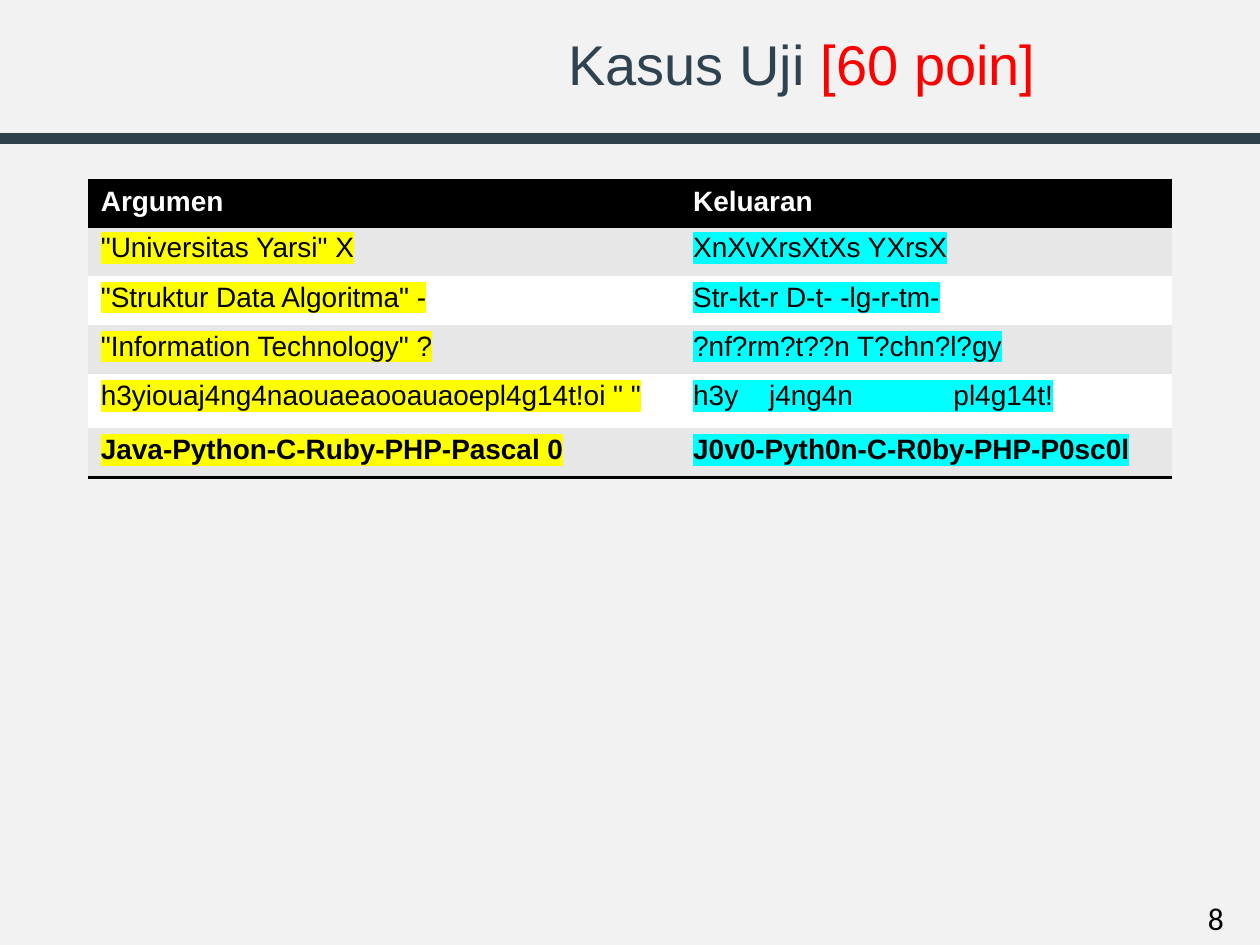
from lxml import etree
from pptx import Presentation
from pptx import util as u
from pptx.dml.color import RGBColor
from pptx.enum import shapes, text
from pptx.oxml import ns

COLORS = {
    "page": "F2F2F2", "rule": "2F424C", "title": "2F424F", "red": "FF0000",
    "black": "000000", "white": "FFFFFF", "band": "E7E7E7",
    "argument": "FFFF00", "output": "00FFFF",
}

CASES = [
    ("Argumen", "Keluaran"),
    ('"Universitas Yarsi" X', "XnXvXrsXtXs YXrsX"),
    ('"Struktur Data Algoritma" -', "Str-kt-r D-t- -lg-r-tm-"),
    ('"Information Technology" ?', "?nf?rm?t??n T?chn?l?gy"),
    ('h3yiouaj4ng4naouaeaooauaoepl4g14t!oi " "', "h3y    j4ng4n             pl4g14t!"),
    ("Java-Python-C-Ruby-PHP-Pascal 0", "J0v0-Pyth0n-C-R0by-PHP-P0sc0l"),
]
COLUMN_WIDTHS = (11.94, 9.9)
ROW_HEIGHTS = (0.92, 1, 0.99, 0.99, 1.09, 1)


def rgb(name):
    return RGBColor.from_string(COLORS[name])


def add_color(parent, tag, color):
    element = etree.SubElement(parent, ns.qn(tag))
    etree.SubElement(element, ns.qn("a:srgbClr"), val=COLORS[color])
    return element


def add_span(para, wording, color, highlight=None, **formats):
    span = para.add_run()
    span.text = wording
    for key, value in formats.items():
        setattr(span.font, key, value)
    span.font.color.rgb = rgb(color)
    if highlight:
        properties = span.font._element
        mark = add_color(properties, "a:highlight", highlight)
        properties.find(ns.qn("a:solidFill")).addnext(mark)


def add_text_box(page, left, top, width, height,
                 align=text.PP_ALIGN.LEFT, anchor=text.MSO_ANCHOR.TOP):
    box = page.shapes.add_textbox(u.Cm(left), u.Cm(top), u.Cm(width), u.Cm(height))
    frame = box.text_frame
    frame.word_wrap = True
    frame.vertical_anchor = anchor
    para = frame.paragraphs[0]
    para.alignment = align
    return para


def add_header(page, left, top, width, height):
    # Rule along the lower edge
    bottom = u.Cm(top + height)
    rule = page.shapes.add_connector(shapes.MSO_CONNECTOR.STRAIGHT,
                                     u.Cm(left), bottom, u.Cm(left + width), bottom)
    rule.line.color.rgb = rgb("rule")
    rule.line.width = u.Pt(6)
    etree.SubElement(rule._element.spPr, ns.qn("a:effectLst"))

    # Title
    para = add_text_box(page, left + 8.23, top + 0.6, 15.88, 1.52,
                        align=text.PP_ALIGN.CENTER, anchor=text.MSO_ANCHOR.MIDDLE)
    para.line_spacing = 0.9
    for wording, color in (("Kasus Uji ", "title"), ("[60 poin]", "red")):
        add_span(para, wording, color, name="Arial", size=u.Pt(32))


def set_borders(cell, black_sides):
    properties = cell._tc.get_or_add_tcPr()
    for index, side in enumerate("LRTB"):
        line = etree.Element(ns.qn(f"a:ln{side}"))
        if side in black_sides:
            line.set("w", str(u.Pt(2)))
            add_color(line, "a:solidFill", "black")
        else:
            etree.SubElement(line, ns.qn("a:noFill"))
        properties.insert(index, line)


def add_case_table(page, left, top):
    table = page.shapes.add_table(
        len(CASES), len(COLUMN_WIDTHS), u.Cm(left), u.Cm(top),
        u.Cm(sum(COLUMN_WIDTHS)), u.Cm(sum(ROW_HEIGHTS))).table
    for column, width in zip(table.columns, COLUMN_WIDTHS):
        column.width = u.Cm(width)
    for row, height in zip(table.rows, ROW_HEIGHTS):
        row.height = u.Cm(height)

    last = len(CASES) - 1
    black_sides = {0: "TB", last: "B"}
    for index, case in enumerate(CASES):
        header = index == 0
        fill = "black" if header else "band" if index % 2 else "white"
        for column, (wording, mark) in enumerate(zip(case, ("argument", "output"))):
            cell = table.cell(index, column)
            cell.fill.solid()
            cell.fill.fore_color.rgb = rgb(fill)
            set_borders(cell, black_sides.get(index, ""))
            add_span(cell.text_frame.paragraphs[0], wording,
                     "white" if header else "black",
                     highlight=None if header else mark,
                     name="Arial", size=u.Pt(16), bold=index in (0, last))


def add_page_number(page, left, top):
    para = add_text_box(page, left, top, 1.27, 1.02)
    add_span(para, "8", "black", name="Calibri", size=u.Pt(18))


def main():
    deck = Presentation()
    deck.slide_width, deck.slide_height = u.Cm(25.4), u.Cm(19.05)
    page = deck.slides.add_slide(deck.slide_layouts[6])
    page.background.fill.solid()
    page.background.fill.fore_color.rgb = rgb("page")

    add_page_number(page, 24.1, 18)
    add_header(page, 0, 0, 25.4, 2.79)
    add_case_table(page, 1.78, 3.63)
    deck.save("out.pptx")


if __name__ == "__main__":
    main()
